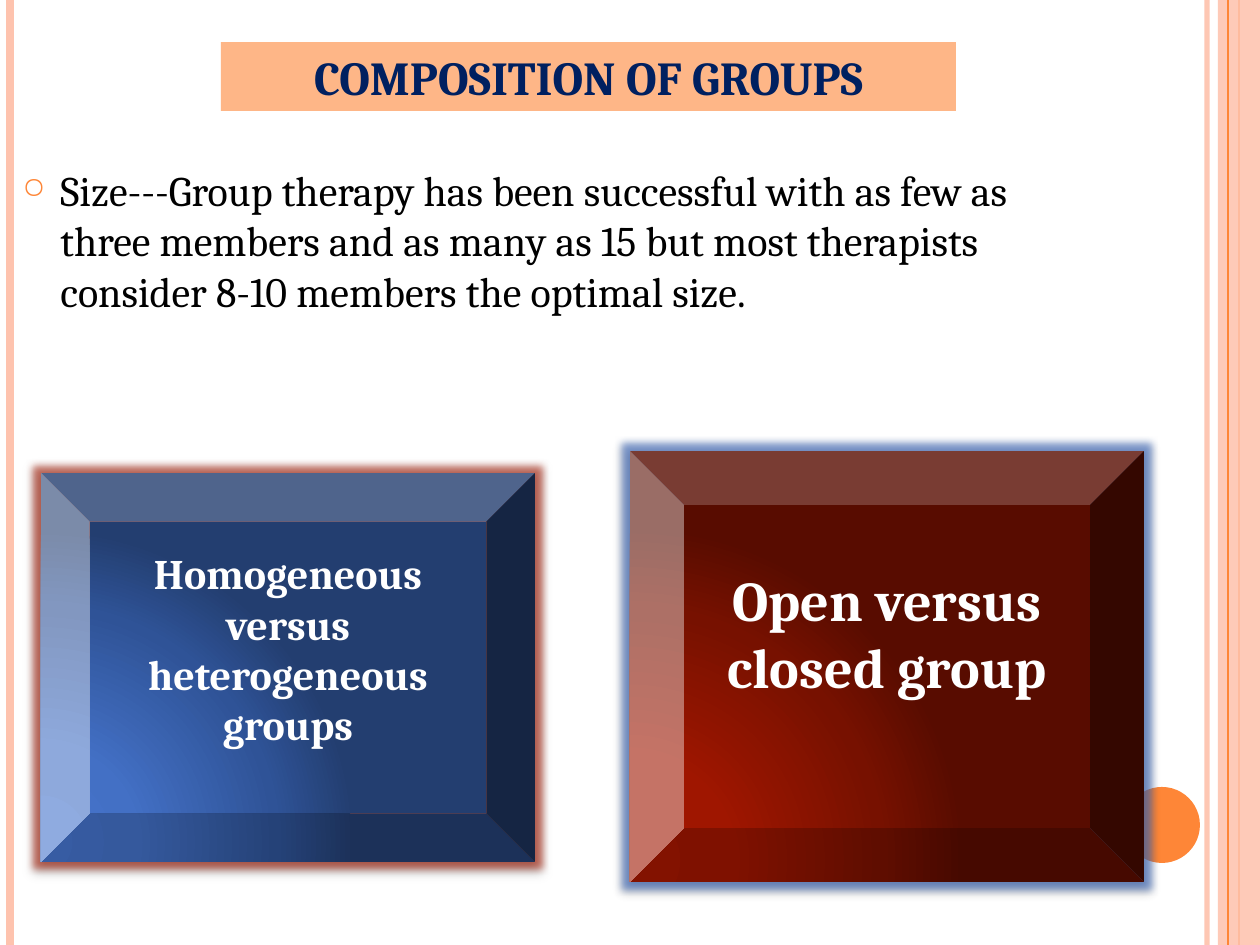
from dataclasses import dataclass

from lxml.etree import SubElement
from pptx import Presentation
from pptx.dml.color import RGBColor
from pptx.enum.shapes import MSO_CONNECTOR, MSO_SHAPE
from pptx.enum.text import MSO_ANCHOR, MSO_AUTO_SIZE, PP_ALIGN
from pptx.oxml import parse_xml
from pptx.oxml.ns import nsdecls, qn
from pptx.util import Pt

EMU_PER_PX = 914400 / 126
WIDTH, HEIGHT = 1260, 945


@dataclass(frozen=True)
class Theme:
    font: str = "Cambria"
    peach: str = "FEC3AE"
    orange: str = "FE8637"
    banner: str = "FEB687"
    navy: str = "002060"
    black: str = "000000"
    white: str = "FFFFFF"
    blues: tuple = ("4574CC", "4370C5", "2F5397", "233E70")
    reds: tuple = ("A41700", "9F1600", "771100", "580C00")
    red_glow: str = "B32C16"
    blue_glow: str = "4370C5"
    title_size: int = 27
    body_size: int = 24
    large_size: int = 32


THEME = Theme()


def px(value):
    return round(value * EMU_PER_PX)


def box(left, top, width, height):
    return [px(value) for value in (left, top, width, height)]


def color(value):
    return RGBColor.from_string(value)


def set_alpha(properties, percent):
    for element in properties.iter(qn("a:srgbClr")):
        SubElement(element, qn("a:alpha"), val=str(percent * 1000))


def write_text(shape, text, size, ink, bold=False, align=PP_ALIGN.CENTER):
    frame = shape.text_frame
    for name, value in {"word_wrap": True, "auto_size": MSO_AUTO_SIZE.NONE}.items():
        setattr(frame, name, value)
    paragraph = frame.paragraphs[0]
    paragraph.alignment = align
    run = paragraph.add_run()
    run.text = text
    for name, value in {"name": THEME.font, "size": Pt(size), "bold": bold}.items():
        setattr(run.font, name, value)
    run.font.color.rgb = color(ink)
    return frame


def add_rule(slide, x, ink, weight, alpha=100):
    line = slide.shapes.add_connector(MSO_CONNECTOR.STRAIGHT, px(x), 0, px(x), px(HEIGHT))
    line.line.color.rgb = color(ink)
    line.line.width = Pt(weight)
    properties = line.line._get_or_add_ln()
    if alpha < 100:
        set_alpha(properties, alpha)
    SubElement(properties.getparent(), qn("a:effectLst"))


def add_plain_shape(slide, kind, bounds, fill=None, alpha=100):
    shape = slide.shapes.add_shape(kind, *box(*bounds))
    shape.line.fill.background()
    shape.shadow.inherit = False
    if fill:
        shape.fill.solid()
        shape.fill.fore_color.rgb = color(fill)
    if alpha < 100:
        set_alpha(shape.fill._xPr, alpha)
    return shape


def add_frame(slide):
    add_rule(slide, 1207, THEME.peach, 3, 93)
    add_rule(slide, 10, THEME.peach, 4.5)
    add_rule(slide, 1239, THEME.orange, 1.5)
    add_plain_shape(slide, MSO_SHAPE.RECTANGLE, (1218, 0, WIDTH - 1218, HEIGHT), THEME.peach, 87)
    add_rule(slide, 1228, THEME.orange, 0.75)
    add_plain_shape(slide, MSO_SHAPE.OVAL, (1124, 787, 76, 76), THEME.orange)


def set_title(slide, text):
    title = slide.shapes.title
    for name, value in zip(("left", "top", "width", "height"), box(221, 42, 735, 69)):
        setattr(title, name, value)
    title.fill.solid()
    title.fill.fore_color.rgb = color(THEME.banner)
    frame = write_text(title, text, THEME.title_size, THEME.navy, True)
    frame.vertical_anchor = MSO_ANCHOR.BOTTOM


def add_bullet_text(slide, text):
    shape = slide.shapes.add_textbox(*box(10, 158, 1103, 735))
    frame = write_text(shape, text, THEME.body_size, THEME.black, align=PP_ALIGN.LEFT)
    properties = frame.paragraphs[0]._p.get_or_add_pPr()
    properties.set("marL", str(px(38)))
    properties.set("indent", str(px(-38)))
    bullet_color = SubElement(properties, qn("a:buClr"))
    SubElement(bullet_color, qn("a:srgbClr"), val=THEME.orange)
    SubElement(properties, qn("a:buSzPct"), val="70000")
    SubElement(properties, qn("a:buChar"), char="○")


def set_radial_fill(shape, colors):
    stops = "".join(
        f'<a:gs pos="{position * 1000}"><a:srgbClr val="{value}"/></a:gs>'
        for position, value in zip((0, 30, 75, 100), colors)
    )
    gradient = parse_xml(
        f'<a:gradFill {nsdecls("a")} rotWithShape="1"><a:gsLst>{stops}</a:gsLst>'
        '<a:path path="circle"><a:fillToRect l="5000" t="100000" r="120000" b="10000"/>'
        "</a:path></a:gradFill>"
    )
    shape.fill.background()
    properties = shape.fill._xPr
    properties.replace(properties.find(qn("a:noFill")), gradient)


def set_glow(shape, ink):
    effects = shape.fill._xPr.find(qn("a:effectLst"))
    glow = SubElement(effects, qn("a:glow"), rad=str(Pt(8)))
    shadow = SubElement(
        effects, qn("a:outerShdw"), blurRad=str(Pt(4)), dist=str(Pt(1.6)), dir="5400000"
    )
    for effect, value, alpha in ((glow, ink, 60), (shadow, THEME.black, 42)):
        SubElement(effect, qn("a:srgbClr"), val=value)
        set_alpha(effect, alpha)


def add_bevel(slide, text, bounds, colors, glow, size, bottom_inset):
    shape = add_plain_shape(slide, MSO_SHAPE.BEVEL, bounds)
    set_radial_fill(shape, colors)
    set_glow(shape, glow)
    frame = write_text(shape, text, size, THEME.white, True)
    frame.vertical_anchor = MSO_ANCHOR.MIDDLE
    frame.margin_bottom = px(bottom_inset)


def main():
    presentation = Presentation()
    presentation.slide_width, presentation.slide_height = px(WIDTH), px(HEIGHT)
    slide = presentation.slides.add_slide(presentation.slide_layouts[5])
    add_frame(slide)
    set_title(slide, "COMPOSITION OF GROUPS")
    add_bullet_text(
        slide,
        "Size---Group therapy has been successful with as few as three members "
        "and as many as 15 but most therapists consider 8-10 members the optimal size.",
    )
    add_bevel(slide, "Homogeneous versus heterogeneous groups", (41, 473, 494, 389),
              THEME.blues, THEME.red_glow, THEME.body_size, 44)
    add_bevel(slide, "Open versus closed group", (630, 451, 514, 431),
              THEME.reds, THEME.blue_glow, THEME.large_size, 74)
    presentation.save("out.pptx")


if __name__ == "__main__":
    main()
